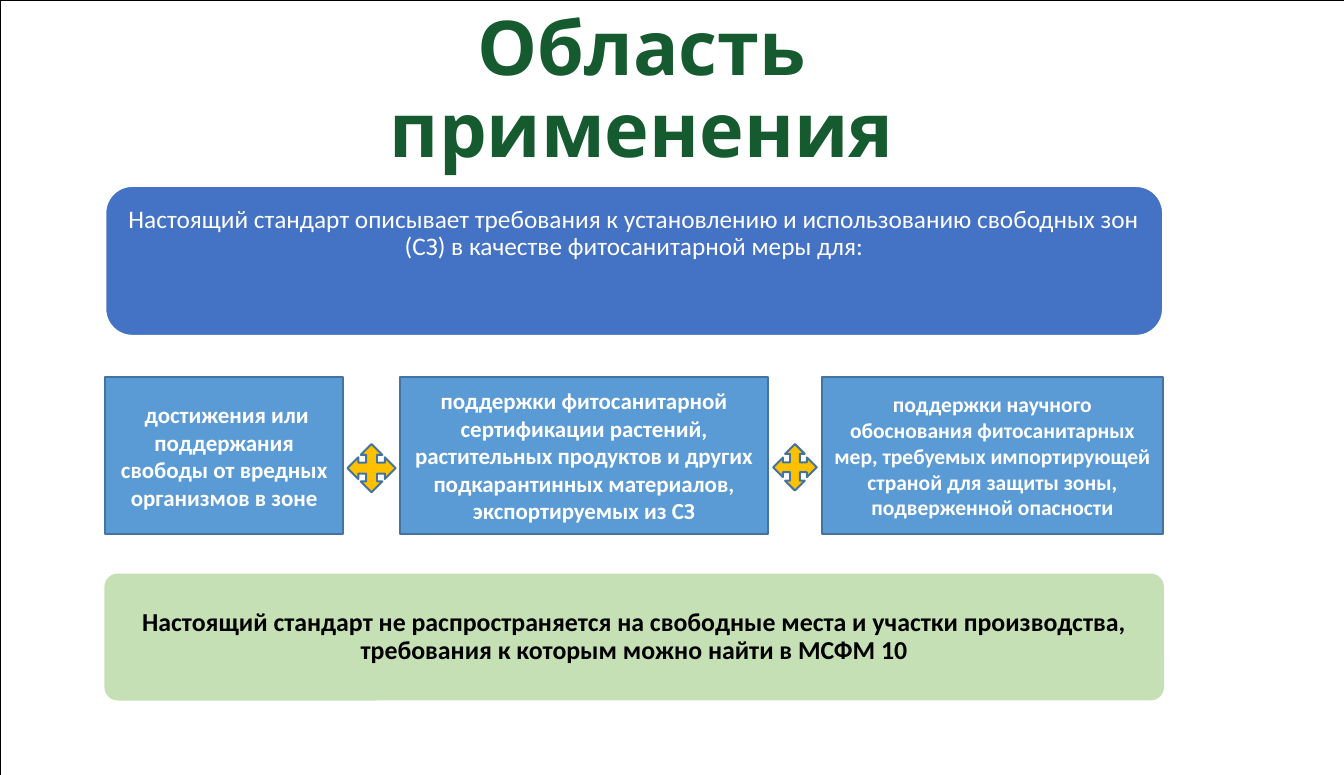
import pptx
import pptx.dml.color
import pptx.enum.shapes
import pptx.enum.text
import pptx.util

Pt = pptx.util.Pt
SHAPES = pptx.enum.shapes.MSO_SHAPE
ANCHOR = pptx.enum.text.MSO_ANCHOR

LEFT, BAND_WIDTH = 73.4, 736.6
REASON_TOP, REASON_HEIGHT = 262.8, 109.4
OUTLINE = "43739E"

# left, width, font size, wording
REASONS = [
    (LEFT, 165.6, 16,
     " достижения или поддержания свободы от вредных организмов в зоне"),
    (278.6, 256.3, 16,
     "поддержки фитосанитарной сертификации растений, растительных продуктов "
     "и других подкарантинных материалов, экспортируемых из СЗ"),
    (572.4, 237.6, 15,
     "поддержки научного обоснования фитосанитарных мер, требуемых "
     "импортирующей страной для защиты зоны, подверженной опасности"),
]


def color(hex_value):
    return pptx.dml.color.RGBColor.from_string(hex_value)


def add_block(slide, kind, box, fill, line, line_width=1.35, corner=None):
    block = slide.shapes.add_shape(kind, *map(Pt, box))
    block.shadow.inherit = False
    if fill:
        block.fill.solid()
        block.fill.fore_color.rgb = color(fill)
    else:
        block.fill.background()
    block.line.color.rgb = color(line)
    block.line.width = Pt(line_width)
    if corner is not None:
        block.adjustments[0] = corner
    return block


def write(shape, text, size, ink="FFFFFF", font="Calibri", bold=True,
          anchor=ANCHOR.MIDDLE, spacing=1.0, inset=None):
    frame = shape.text_frame
    frame.word_wrap = True
    frame.vertical_anchor = anchor
    if inset is not None:
        frame.margin_left = frame.margin_right = Pt(inset)
        frame.margin_top = frame.margin_bottom = Pt(inset)
    paragraph = frame.paragraphs[0]
    paragraph.alignment = pptx.enum.text.PP_ALIGN.CENTER
    paragraph.line_spacing = spacing
    run = paragraph.add_run()
    run.text = text
    run.font.name = font
    run.font.size = Pt(size)
    run.font.bold = bold
    run.font.color.rgb = color(ink)


def main():
    deck = pptx.Presentation()
    deck.slide_width, deck.slide_height = Pt(936), Pt(540)
    slide = deck.slides.add_slide(deck.slide_layouts[6])

    # Slide border and title
    add_block(slide, SHAPES.RECTANGLE, (0, 0, 936, 540), None, "000000", 0.25)
    title = slide.shapes.add_textbox(Pt(148.3), Pt(36.7), Pt(596.9), Pt(87.8))
    write(title, "Область применения", 52.6, ink="165A30", font="Cabin",
          anchor=ANCHOR.BOTTOM, spacing=0.9)

    # What the standard covers
    scope = add_block(slide, SHAPES.ROUNDED_RECTANGLE,
                      (LEFT, 129.6, BAND_WIDTH, 104.4),
                      "4472C4", "FFFFFF", corner=0.18)
    write(scope, "Настоящий стандарт описывает требования к установлению и "
          "использованию свободных зон (СЗ) в качестве фитосанитарной меры для:",
          17.6, bold=False, anchor=ANCHOR.TOP, spacing=0.9, inset=8.6)

    # What it does not cover
    exclusion = add_block(slide, SHAPES.ROUNDED_RECTANGLE,
                          (LEFT, 400.3, BAND_WIDTH, 87.1),
                          "C5E0B4", "C5E0B4", corner=0.1)
    write(exclusion, "Настоящий стандарт не распространяется на свободные места "
          "и участки производства, требования к которым можно найти в МСФМ 10",
          18, ink="000000", spacing=0.9, inset=5)

    # Three purposes
    for left, width, size, text in REASONS:
        reason = add_block(slide, SHAPES.RECTANGLE,
                           (left, REASON_TOP, width, REASON_HEIGHT),
                           "5B9BD5", OUTLINE)
        write(reason, text, size)

    # Arrows centred in the gaps between purposes
    arrow_sizes = [(33.6, 33.6), (30.4, 32.4)]
    for before, after, (width, height) in zip(REASONS, REASONS[1:], arrow_sizes):
        middle = (before[0] + before[1] + after[0]) / 2
        add_block(slide, SHAPES.QUAD_ARROW,
                  (middle - width / 2, 309.4, width, height),
                  "FFC000", OUTLINE)

    deck.save("out.pptx")


if __name__ == "__main__":
    main()
